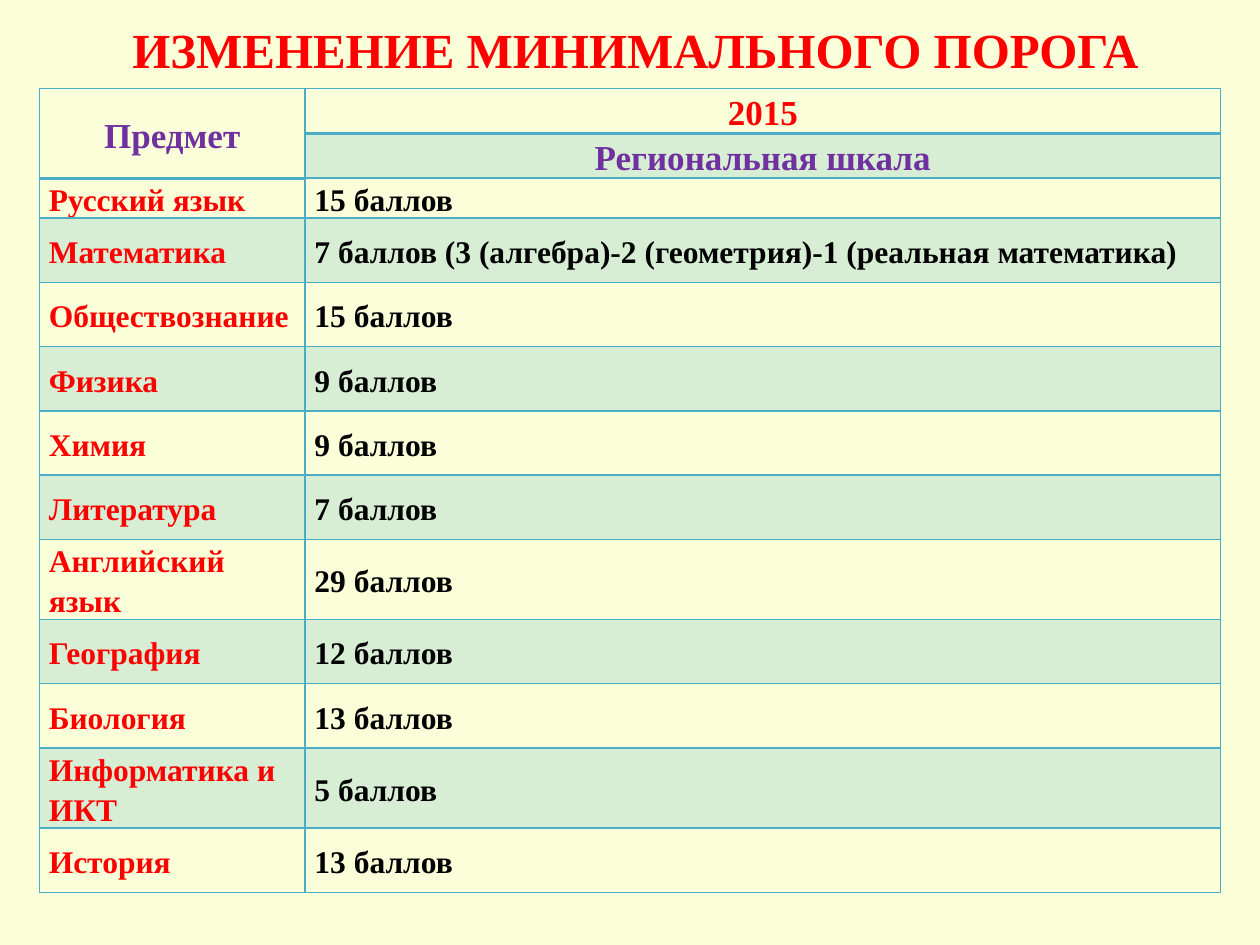
from lxml.etree import SubElement
from pptx import Presentation
from pptx.dml.color import RGBColor
from pptx.enum.text import MSO_ANCHOR, PP_ALIGN
from pptx.oxml.ns import qn
from pptx.util import Pt

CREAM = RGBColor(0xFA, 0xFF, 0xD9)
RED = RGBColor(0xFF, 0x00, 0x00)
PURPLE = RGBColor(0x70, 0x30, 0xA0)
BLACK = RGBColor(0x00, 0x00, 0x00)
TEAL = RGBColor(0x4B, 0xAC, 0xC6)
FONT = "Times New Roman"

SCORES = [
    ("Русский язык", "15 баллов"),
    ("Математика", "7 баллов (3 (алгебра)-2 (геометрия)-1 (реальная математика)"),
    ("Обществознание", "15 баллов"),
    ("Физика", "9 баллов"),
    ("Химия", "9 баллов"),
    ("Литература", "7 баллов"),
    ("Английский язык", "29 баллов"),
    ("География", "12 баллов"),
    ("Биология", "13 баллов"),
    ("Информатика и ИКТ", "5 баллов"),
    ("История", "13 баллов"),
]
HEADER_ROWS = 2
HEADER_SIZE, BODY_SIZE = 20, 18
LINE_FACTOR = 1.27
COLUMN_WIDTHS = [151.8, 523.2]
HEADER_HEIGHT, FIRST_HEIGHT, ROW_HEIGHT, TWO_LINE_HEIGHT = 25.6, 22.9, 36.72, 45.8
TWO_LINE_SUBJECTS = {"Английский язык", "Информатика и ИКТ"}
THICK_EDGES = {(0, 0, "B"), (0, 1, "B"), (1, 0, "B"), (1, 1, "T"), (2, 0, "T")}


def write(frame, text, size, color, align=PP_ALIGN.LEFT):
    paragraph = frame.paragraphs[0]
    paragraph.alignment = align
    paragraph.line_spacing = Pt(size * LINE_FACTOR)
    run = paragraph.add_run()
    run.text = text
    run.font.color.rgb = color
    for name, value in {"name": FONT, "size": Pt(size), "bold": True}.items():
        setattr(run.font, name, value)


def add_title(slide, left, top, width, height):
    box = slide.shapes.add_textbox(Pt(left), Pt(top), Pt(width), Pt(height))
    frame = box.text_frame
    frame.word_wrap = True
    frame.vertical_anchor = MSO_ANCHOR.MIDDLE
    write(frame, "ИЗМЕНЕНИЕ МИНИМАЛЬНОГО ПОРОГА", 28, RED, PP_ALIGN.CENTER)
    frame.paragraphs[0].line_spacing = 1.0


def style_cell(cell, row, column):
    """Set borders, margins and the banded fill of one cell."""
    properties = cell._tc.get_or_add_tcPr()
    for side in "LRTB":
        width = Pt(2 if (row, column, side) in THICK_EDGES else 1)
        line = SubElement(properties, qn(f"a:ln{side}"), w=str(width))
        fill = SubElement(line, qn("a:solidFill"))
        SubElement(fill, qn("a:srgbClr"), val=str(TEAL))
    margins = {"margin_left": 5.4, "margin_right": 5.4, "margin_top": 0, "margin_bottom": 0}
    for name, value in margins.items():
        setattr(cell, name, Pt(value))
    cell.vertical_anchor = MSO_ANCHOR.MIDDLE
    if row % 2 and (row, column) != (1, 0):
        cell.fill.solid()
        cell.fill.fore_color.rgb = TEAL
        color = properties.find(qn("a:solidFill")).find(qn("a:srgbClr"))
        SubElement(color, qn("a:alpha"), val="20000")
    else:
        cell.fill.background()


def row_height(subject, index):
    if index == 0:
        return FIRST_HEIGHT
    return TWO_LINE_HEIGHT if subject in TWO_LINE_SUBJECTS else ROW_HEIGHT


def add_score_table(slide, left, top):
    heights = [HEADER_HEIGHT] * HEADER_ROWS
    heights += [row_height(subject, index) for index, (subject, _) in enumerate(SCORES)]
    table = slide.shapes.add_table(
        len(heights), len(COLUMN_WIDTHS), Pt(left), Pt(top),
        Pt(sum(COLUMN_WIDTHS)), Pt(sum(heights))).table
    table.first_row = table.horz_banding = False
    for column, width in zip(table.columns, COLUMN_WIDTHS):
        column.width = Pt(width)
    for row, height in enumerate(heights):
        table.rows[row].height = Pt(height)
        for column in range(len(COLUMN_WIDTHS)):
            style_cell(table.cell(row, column), row, column)

    table.cell(0, 0).merge(table.cell(1, 0))
    headers = [(0, 0, "Предмет", PURPLE), (0, 1, "2015", RED),
               (1, 1, "Региональная шкала", PURPLE)]
    for row, column, text, color in headers:
        write(table.cell(row, column).text_frame, text, HEADER_SIZE, color, PP_ALIGN.CENTER)
    for row, (subject, score) in enumerate(SCORES, HEADER_ROWS):
        write(table.cell(row, 0).text_frame, subject, BODY_SIZE, RED)
        write(table.cell(row, 1).text_frame, score, BODY_SIZE, BLACK)


def main():
    presentation = Presentation()
    presentation.slide_width, presentation.slide_height = Pt(720), Pt(540)
    slide = presentation.slides.add_slide(presentation.slide_layouts[6])
    slide.background.fill.solid()
    slide.background.fill.fore_color.rgb = CREAM
    add_title(slide, 39.2, 0, 648, 56.2)
    add_score_table(slide, 22.5, 50.6)
    presentation.save("out.pptx")


if __name__ == "__main__":
    main()
